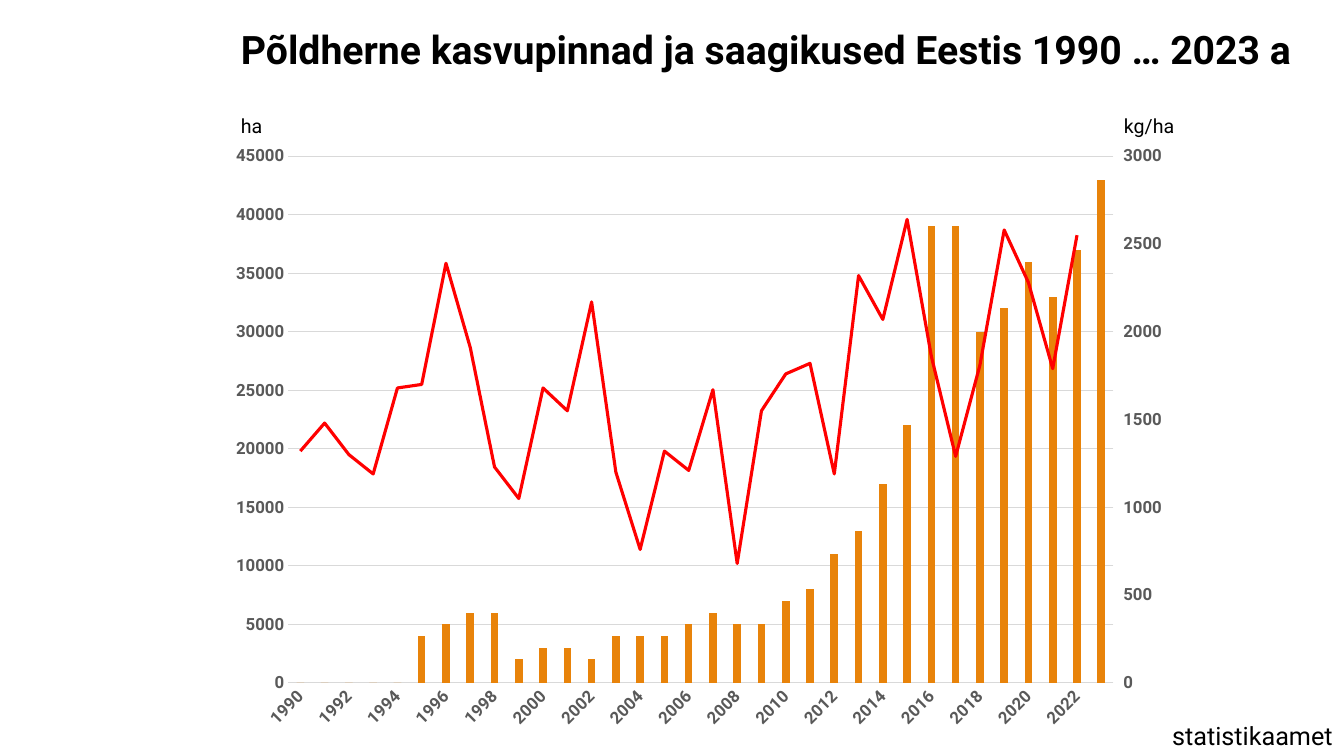
from copy import deepcopy

from lxml.etree import SubElement
from pptx import Presentation
from pptx.chart.data import CategoryChartData as Data
from pptx.dml.color import RGBColor as RGB
from pptx.enum.chart import XL_CHART_TYPE as Kind, XL_MARKER_STYLE as Mark
from pptx.enum.chart import XL_TICK_MARK as Tick
from pptx.enum.text import MSO_AUTO_SIZE as Fit
from pptx.oxml import parse_xml
from pptx.oxml.ns import nsdecls, qn
from pptx.util import Emu, Pt

PX = 9525
FONT = "Roboto"
HEX = {"text": "000000", "label": "595959", "grid": "D9D9D9",
       "area": "E8830A", "yield": "FF0000"}

YEARS = [str(year) for year in range(1990, 2024)]
AREA = [0, 0, 0, 0, 0, 4000, 5000, 6000, 6000, 2000, 3000, 3000, 2000,
        4000, 4000, 4000, 5000, 6000, 5000, 5000, 7000, 8000, 11000, 13000,
        17000, 22000, 39000, 39000, 30000, 32000, 36000, 33000, 37000, 43000]
YIELD = [1320, 1480, 1300, 1190, 1680, 1700, 2390, 1910, 1230, 1050, 1680,
         1550, 2170, 1200, 760, 1320, 1210, 1670, 680, 1550, 1760, 1820,
         1190, 2320, 2070, 2640, 1860, 1290, 1810, 2580, 2280, 1790, 2550,
         None]


def color(key):
    return RGB.from_string(HEX[key])


def emu(*box):
    return [Emu(n * PX) for n in box]


def style(font, size, key, bold):
    font.name, font.size, font.bold = FONT, Pt(size), bold
    font.color.rgb = color(key)


def add_text(slide, box, text, size, bold=False):
    frame = slide.shapes.add_textbox(*emu(*box)).text_frame
    frame.word_wrap = False
    frame.auto_size = Fit.SHAPE_TO_FIT_TEXT
    frame.text = text
    style(frame.paragraphs[0].runs[0].font, size, "text", bold)


def set_axes(chart):
    for axis in (chart.category_axis, chart.value_axis):
        axis.major_tick_mark = axis.minor_tick_mark = Tick.NONE
        style(axis.tick_labels.font, 12, "label", True)

    # Every second year, slanted
    years = chart.category_axis
    years.format.line.color.rgb = color("grid")
    years.format.line.width = Pt(0.75)
    node = chart._chartSpace.find(".//" + qn("c:catAx"))
    node.find(".//" + qn("a:bodyPr")).set("rot", "-2700000")
    skip = parse_xml(f'<c:tickLblSkip {nsdecls("c")} val="2"/>')
    node.find(qn("c:noMultiLvlLbl")).addprevious(skip)

    # Hectares on the left
    left = chart.value_axis
    left.minimum_scale, left.maximum_scale, left.major_unit = 0, 45000, 5000
    left.format.line.fill.background()
    left.has_major_gridlines = True
    grid = left.major_gridlines.format.line
    grid.color.rgb, grid.width = color("grid"), Pt(0.75)


def add_right(chart):
    """Turn the second series into a line on its own right-hand axis."""
    area = chart._chartSpace.find(".//" + qn("c:plotArea"))
    bars = area.find(qn("c:barChart"))
    line = parse_xml(
        f'<c:lineChart {nsdecls("c")}><c:grouping val="standard"/>'
        '<c:varyColors val="0"/><c:marker val="1"/>'
        '<c:axId val="501"/><c:axId val="502"/></c:lineChart>')
    bars.addnext(line)
    ser = bars.findall(qn("c:ser"))[1]
    for flag in ser.findall(qn("c:invertIfNegative")):
        ser.remove(flag)
    line.find(qn("c:marker")).addprevious(ser)

    cat = deepcopy(area.find(qn("c:catAx")))
    val = deepcopy(area.find(qn("c:valAx")))
    val.remove(val.find(qn("c:majorGridlines")))
    edits = [
        (cat, {"axId": "501", "crossAx": "502", "delete": "1"}),
        (val, {"axId": "502", "crossAx": "501", "axPos": "r",
               "crosses": "max", "majorTickMark": "out",
               "majorUnit": "500", "scaling/c:max": "3000"})]
    last = area.find(qn("c:valAx"))
    for axis, values in edits:
        for tag, value in values.items():
            axis.find("c:" + tag, area.nsmap).set("val", value)
        last.addnext(axis)
        last = axis


def set_plot(chart, x, y, w, h):
    area = chart._chartSpace.find(".//" + qn("c:plotArea"))
    for old in area.findall(qn("c:layout")):
        area.remove(old)
    layout = parse_xml(f'<c:layout {nsdecls("c")}><c:manualLayout/></c:layout>')
    parts = [("layoutTarget", "inner"), ("xMode", "edge"), ("yMode", "edge"),
             ("x", x), ("y", y), ("w", w), ("h", h)]
    for tag, value in parts:
        SubElement(layout[0], qn("c:" + tag)).set("val", str(value))
    area.insert(0, layout)


def add_graph(slide, box):
    x, y, w, h = box
    data = Data()
    data.categories = YEARS
    data.add_series("Series 1", AREA)
    data.add_series("Series 2", YIELD)
    chart = slide.shapes.add_chart(
        Kind.COLUMN_CLUSTERED, *emu(*box), data).chart
    chart.has_title = chart.has_legend = False
    style(chart.font, 12, "text", True)
    set_axes(chart)
    add_right(chart)
    set_plot(chart, 0.076, 0.076, 0.859, 0.832)

    # Columns for area, line for yield
    bars, lines = chart.plots
    bars.gap_width, bars.overlap = 219, -27
    bars.vary_by_categories = lines.vary_by_categories = False
    fill = bars.series[0].format.fill
    fill.solid()
    fill.fore_color.rgb = color("area")
    curve = lines.series[0]
    curve.smooth = False
    curve.marker.style = Mark.NONE
    curve.format.line.color.rgb = color("yield")
    curve.format.line.width = Pt(2.25)

    # Units above the axes
    add_text(slide, (x + 15, y + 1, 40, 33), "ha", 14)
    add_text(slide, (x + w - 59, y + 1, 68, 33), "kg/ha", 14)


def main():
    deck = Presentation()
    deck.slide_width, deck.slide_height = emu(1280, 720)
    slide = deck.slides.add_slide(deck.slide_layouts[6])
    add_text(slide, (220, 19, 1031, 55),
             "Põldherne kasvupinnad ja saagikused Eestis 1990 … 2023 a",
             28, True)
    add_text(slide, (1107, 681, 174, 38), "statistikaamet", 18)
    add_graph(slide, (205, 103, 915, 603))
    deck.save("out.pptx")


if __name__ == "__main__":
    main()
